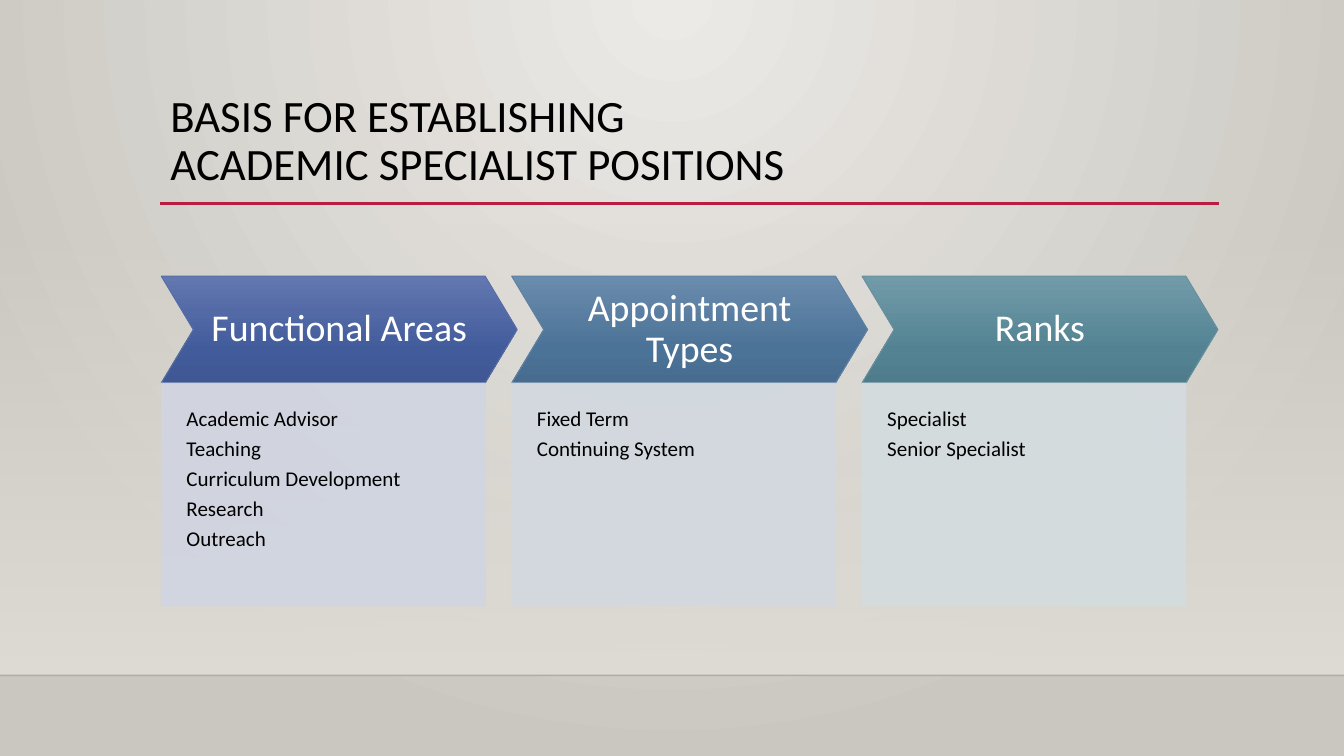
from dataclasses import dataclass

from pptx import Presentation
from pptx.dml.color import RGBColor
from pptx.enum.shapes import MSO_CONNECTOR, MSO_SHAPE
from pptx.enum.text import MSO_ANCHOR, PP_ALIGN
from pptx.oxml import parse_xml
from pptx.oxml.ns import nsdecls, qn
from pptx.util import Inches, Pt

RECT, CHEVRON = MSO_SHAPE.RECTANGLE, MSO_SHAPE.CHEVRON
STRAIGHT = MSO_CONNECTOR.STRAIGHT
LEFT, CENTER = PP_ALIGN.LEFT, PP_ALIGN.CENTER
TOP, MIDDLE = MSO_ANCHOR.TOP, MSO_ANCHOR.MIDDLE


@dataclass(frozen=True)
class Theme:
    font: str = "Calibri"
    title: int = 32
    heading: int = 27
    body: int = 15
    ink: str = "000000"
    white: str = "FFFFFF"
    accent: str = "B71E42"
    floor_line: str = "000001"
    backdrop: tuple = ((0, "ECEAE7", 100), (100, "CAC7C1", 100))
    wall: tuple = ((0, "DFDBD5", 0), (100, "DFDBD5", 100))


THEME = Theme()
DOWN = '<a:lin ang="5400000" scaled="0"/>'
RADIAL = '<a:path path="circle"><a:fillToRect l="43000" r="43000" b="100000"/></a:path>'

COLUMNS = [
    ("Functional Areas",
     ["Academic Advisor", "Teaching", "Curriculum Development", "Research", "Outreach"],
     ("6378B0", "425B9B", "3F5793"), "586EA6", "D1D5E1"),
    ("Appointment Types", ["Fixed Term", "Continuing System"],
     ("6A8CAD", "4B7297", "476C8F"), "6083A3", "D2D9E0"),
    ("Ranks", ["Specialist", "Senior Specialist"],
     ("729BA9", "538393", "4F7C8B"), "6892A0", "D4DCDF"),
]


def rgb(value):
    return RGBColor.from_string(value)


def set_gradient(fill, element, stops, direction):
    fill.gradient()
    old = element.find(".//" + qn("a:gradFill"))
    gs = "".join(
        f'<a:gs pos="{pos * 1000}"><a:srgbClr val="{color}">'
        f'<a:alpha val="{alpha * 1000}"/></a:srgbClr></a:gs>'
        for pos, color, alpha in stops)
    old.getparent().replace(old, parse_xml(
        f'<a:gradFill {nsdecls("a")} rotWithShape="1"><a:gsLst>{gs}</a:gsLst>'
        f'{direction}</a:gradFill>'))


def set_alpha(element, percent):
    for color in element.spPr.iter(qn("a:srgbClr")):
        color.append(parse_xml(f'<a:alpha {nsdecls("a")} val="{percent * 1000}"/>'))


def add_box(s, kind, x, y, w, h):
    sp = s.shapes.add_shape(kind, Inches(x), Inches(y), Inches(w), Inches(h))
    sp.shadow.inherit = False
    return sp


def add_rule(s, x1, x2, y, color, width):
    line = s.shapes.add_connector(STRAIGHT, Inches(x1), Inches(y), Inches(x2), Inches(y))
    line.line.color.rgb = rgb(color)
    line.line.width = Pt(width)
    line.element.spPr.append(parse_xml(f'<a:effectLst {nsdecls("a")}/>'))
    return line


def write(tf, lines, size, color, align, anchor, insets, after=0):
    tf.word_wrap = True
    tf.vertical_anchor = anchor
    tf.margin_left, tf.margin_top, tf.margin_right, tf.margin_bottom = map(Inches, insets)
    tf.text = "\n".join(lines)
    for p in tf.paragraphs:
        p.alignment = align
        p.line_spacing = 0.9
        p.space_before = Pt(0)
        p.space_after = Pt(after)
        for r in p.runs:
            r.font.name = THEME.font
            r.font.size = Pt(size)
            r.font.color.rgb = rgb(color)


def add_backdrop(s, w):
    set_gradient(s.background.fill, s.element, THEME.backdrop, RADIAL)
    wall = add_box(s, RECT, 0, 2.21, w, 4.49)
    set_gradient(wall.fill, wall.element, THEME.wall, DOWN)
    wall.line.fill.background()
    floor = add_rule(s, 0, w, 6.7, THEME.floor_line, 1)
    set_alpha(floor.element, 20)


def add_title(s, x, y, w, h):
    add_rule(s, x, x + w, y + h - 0.01, THEME.accent, 2.5)
    title = s.shapes.title
    title.left, title.top, title.width, title.height = map(Inches, (x, y, w, h))
    write(title.text_frame, ["BASIS FOR ESTABLISHING\vACADEMIC SPECIALIST POSITIONS"],
          THEME.title, THEME.ink, LEFT, TOP, (0.1, 0.05, 0.1, 0.05))


def add_column(s, x, y, w, h, column):
    heading, items, shades, edge, tint = column
    head_h = 1.06
    tip = 0.3 * head_h

    head = add_box(s, CHEVRON, x, y, w, head_h)
    head.adjustments[0] = 0.3
    stops = [(pos, shade, 100) for pos, shade in zip((0, 69, 100), shades)]
    set_gradient(head.fill, head.element, stops, DOWN)
    head.line.color.rgb = rgb(edge)
    head.line.width = Pt(0.75)
    write(head.text_frame, [heading], THEME.heading, THEME.white, CENTER, MIDDLE, [0.13] * 4)

    panel = add_box(s, RECT, x, y + head_h, w - tip, h - head_h)
    panel.fill.solid()
    panel.fill.fore_color.rgb = rgb(tint)
    panel.line.color.rgb = rgb(tint)
    panel.line.width = Pt(0.75)
    set_alpha(panel.element, 90)
    write(panel.text_frame, items, THEME.body, THEME.ink, LEFT, TOP,
          (0.25, 0.25, 0.25, 0.51), 0.35 * THEME.body)


def add_columns(s, x, y, w, h):
    col_w = 3.53
    pitch = (w - col_w) / (len(COLUMNS) - 1)
    for i, column in enumerate(COLUMNS):
        add_column(s, x + i * pitch, y, col_w, h, column)


def main():
    prs = Presentation()
    prs.slide_width, prs.slide_height = Inches(13.33), Inches(7.5)
    s = prs.slides.add_slide(prs.slide_layouts[5])
    add_backdrop(s, 13.33)
    add_title(s, 1.59, 0.88, 10.5, 1.15)
    add_columns(s, 1.6, 2.74, 10.48, 3.27)
    prs.save("out.pptx")


if __name__ == "__main__":
    main()
